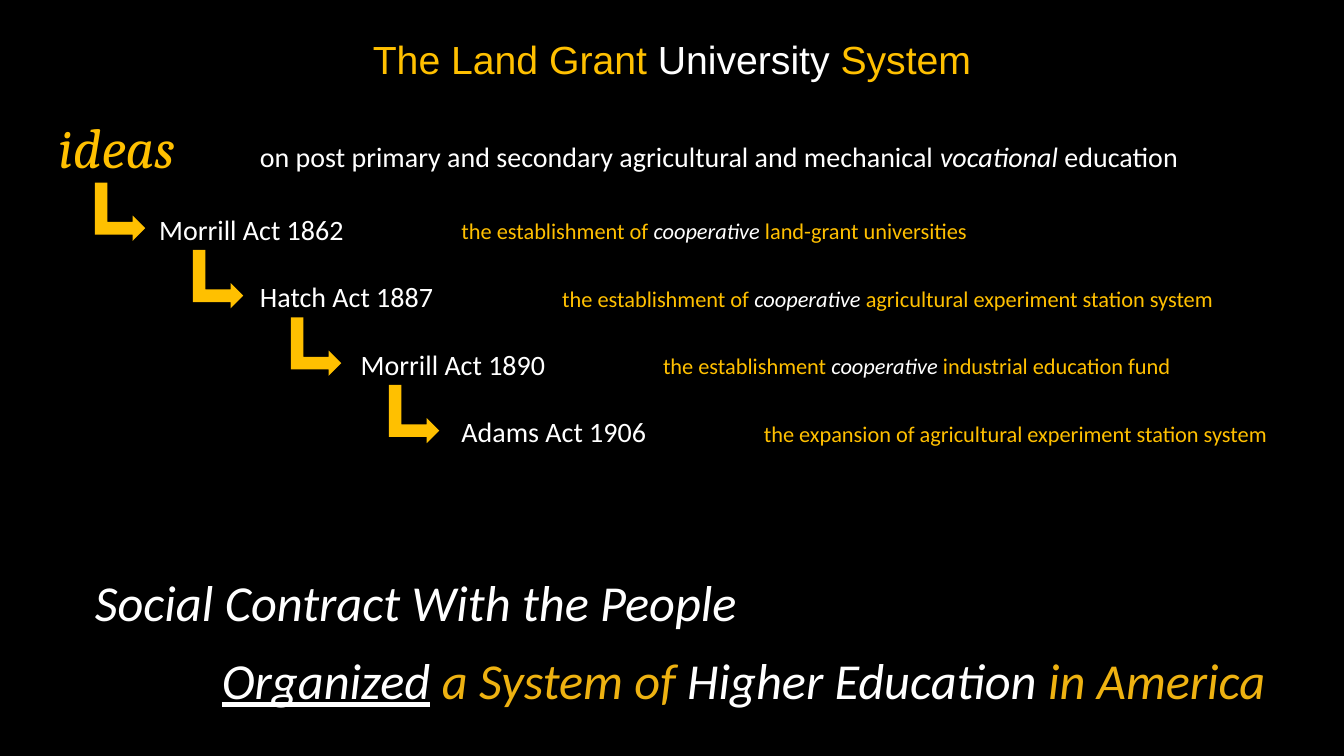
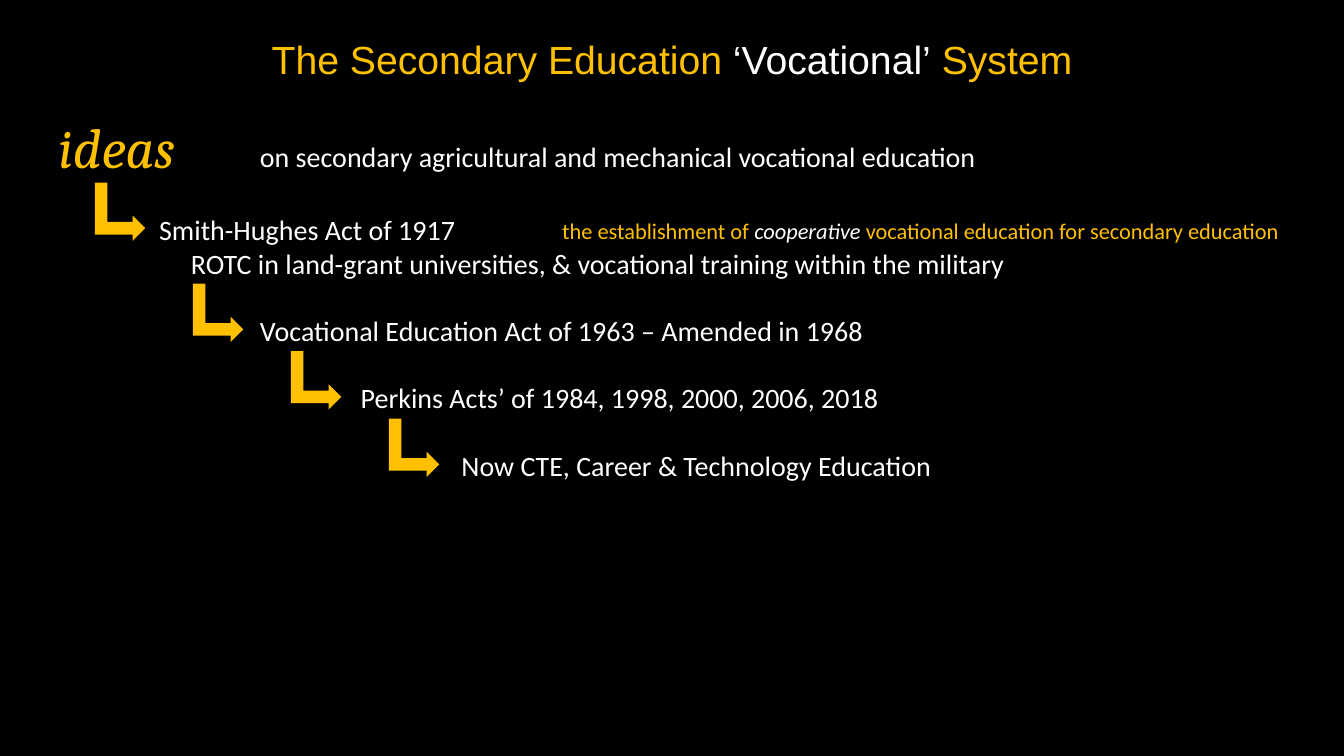
from dataclasses import dataclass

from pptx import Presentation
from pptx.dml.color import RGBColor
from pptx.enum.shapes import MSO_SHAPE
from pptx.enum.text import PP_ALIGN
from pptx.util import Cm, Pt

BLACK = RGBColor(0x00, 0x00, 0x00)
WHITE = RGBColor(0xFF, 0xFF, 0xFF)
GOLD = RGBColor(0xFF, 0xC0, 0x00)
DARK_GOLD = RGBColor(0xEE, 0xB2, 0x11)

# All lengths are in centimetres
SLIDE_W, SLIDE_H = 33.87, 19.05
INDENT = 2.54
LINE_H = 0.85
STEP_H = 2 * LINE_H
STEP_LEFT, STEP_TOP = 4.01, 5.35
DETAIL_DROP = 0.13  # puts 16 pt text on the baseline of 20 pt text
ARROW_LEFT, ARROW_TOP, ARROW_DX = 2.29, 4.7, 2.47
ARROW_W, ARROW_H = 1.47, 1.27


@dataclass(frozen=True)
class Run:
    text: str
    color: RGBColor = WHITE
    italic: bool = False
    underline: bool = False


@dataclass(frozen=True)
class Step:
    name: str
    detail: tuple[Run, ...] = ()
    note: str = ""


@dataclass(frozen=True)
class Closing:
    left: float
    top: float
    runs: tuple[Run, ...]


@dataclass(frozen=True)
class Page:
    title: tuple[Run, ...]
    topic: tuple[Run, ...]
    steps: tuple[Step, ...]
    detail_offset: float
    closings: tuple[Closing, ...] = ()


COOPERATIVE = Run("cooperative ", italic=True)

PAGES = (
    Page(
        title=(Run("The Land Grant ", GOLD), Run("University"), Run(" System", GOLD)),
        topic=(
            Run("on post primary and secondary agricultural and mechanical "),
            Run("vocational", italic=True),
            Run(" education"),
        ),
        steps=(
            Step("Morrill Act 1862", (
                Run("the establishment of ", GOLD), COOPERATIVE,
                Run("land-grant universities", GOLD))),
            Step("Hatch Act 1887", (
                Run("the establishment of ", GOLD), COOPERATIVE,
                Run("agricultural experiment station system", GOLD))),
            Step("Morrill Act 1890", (
                Run("the establishment ", GOLD), COOPERATIVE,
                Run("industrial education fund", GOLD))),
            Step("Adams Act 1906", (
                Run("the expansion of agricultural experiment station system", GOLD),)),
        ),
        detail_offset=3 * INDENT,
        closings=(
            Closing(2.39, 14.38, (Run("Social Contract With the People", italic=True),)),
            Closing(5.59, 16.36, (
                Run("Organized", italic=True, underline=True),
                Run(" ", italic=True),
                Run("a System of ", DARK_GOLD, italic=True),
                Run("Higher Education ", italic=True),
                Run("in America", DARK_GOLD, italic=True))),
        ),
    ),
    Page(
        title=(Run("The Secondary Education ", GOLD), Run("‘Vocational’"),
               Run(" System", GOLD)),
        topic=(Run("on secondary agricultural and mechanical vocational education"),),
        steps=(
            Step("Smith-Hughes Act of 1917", (
                Run("the establishment of ", GOLD), COOPERATIVE,
                Run("vocational education for secondary education", GOLD)),
                "ROTC in land-grant universities, & vocational training within the military"),
            Step("Vocational Education Act of 1963 – Amended in 1968"),
            Step("Perkins Acts’ of 1984, 1998, 2000, 2006, 2018"),
            Step("Now CTE, Career & Technology Education"),
        ),
        detail_offset=4 * INDENT,
    ),
)


def add_text(s, left: float, top: float, runs: tuple[Run, ...], size: int,
             font: str = "Calibri", width: float | None = None,
             align: PP_ALIGN = PP_ALIGN.LEFT) -> None:
    """Add one line of text; without a width the box reaches the slide edge."""
    box_w = SLIDE_W - left if width is None else width
    tf = s.shapes.add_textbox(Cm(left), Cm(top), Cm(box_w),
                              Cm(size * 0.043)).text_frame
    tf.word_wrap = True
    tf.margin_left = tf.margin_right = tf.margin_top = tf.margin_bottom = 0
    p = tf.paragraphs[0]
    p.alignment = align
    for run in runs:
        r = p.add_run()
        r.text = run.text
        r.font.name = font
        r.font.size = Pt(size)
        r.font.color.rgb = run.color
        r.font.italic = run.italic
        r.font.underline = run.underline


def add_arrow(s, left: float, top: float) -> None:
    sp = s.shapes.add_shape(MSO_SHAPE.BENT_UP_ARROW, Cm(left), Cm(top),
                            Cm(ARROW_W), Cm(ARROW_H))
    sp.rotation = 90
    sp.shadow.inherit = False
    sp.fill.solid()
    sp.fill.fore_color.rgb = GOLD
    sp.line.fill.background()


def add_steps(s, steps: tuple[Step, ...], detail_offset: float) -> None:
    """Draw the staircase of acts; a note pushes the later steps down a line."""
    shift = 0.0
    for i, step in enumerate(steps):
        left = STEP_LEFT + i * INDENT
        top = STEP_TOP + i * STEP_H + shift
        add_arrow(s, ARROW_LEFT + i * ARROW_DX, ARROW_TOP + i * STEP_H + shift)
        add_text(s, left, top, (Run(step.name),), 20,
                 width=detail_offset if step.detail else None)
        if step.detail:
            add_text(s, left + detail_offset, top + DETAIL_DROP, step.detail, 16)
        if step.note:
            add_text(s, left + 0.8, top + LINE_H, (Run(step.note),), 20)
            shift += LINE_H


def add_page(prs, page: Page) -> None:
    s = prs.slides.add_slide(prs.slide_layouts[6])
    s.background.fill.solid()
    s.background.fill.fore_color.rgb = BLACK
    add_text(s, 0, 0.89, page.title, 28, "Arial", align=PP_ALIGN.CENTER)
    add_text(s, 1.47, 2.84, (Run("ideas", GOLD, italic=True),), 40, "Cambria",
             width=2 * INDENT)
    add_text(s, STEP_LEFT + INDENT, 3.51, page.topic, 20)
    add_steps(s, page.steps, page.detail_offset)
    for closing in page.closings:
        add_text(s, closing.left, closing.top, closing.runs, 36)


def main() -> None:
    prs = Presentation()
    prs.slide_width, prs.slide_height = Cm(SLIDE_W), Cm(SLIDE_H)
    for page in PAGES:
        add_page(prs, page)
    prs.save("out.pptx")


if __name__ == "__main__":
    main()
